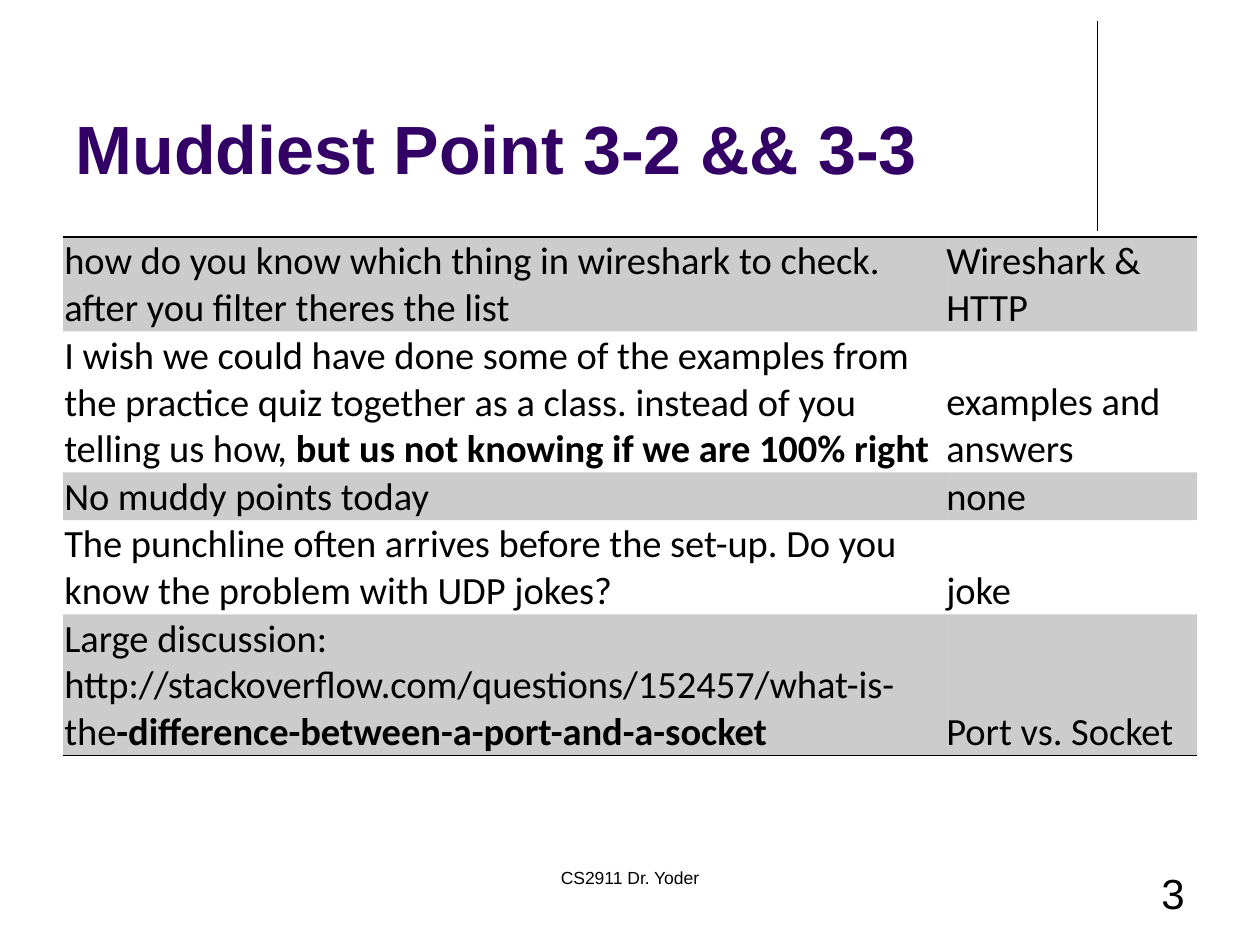
from dataclasses import dataclass

from lxml import etree
from pptx import Presentation
from pptx.dml.color import RGBColor
from pptx.enum.shapes import MSO_CONNECTOR
from pptx.enum.text import MSO_ANCHOR, MSO_AUTO_SIZE, PP_ALIGN
from pptx.oxml import parse_xml
from pptx.oxml.ns import nsdecls, qn
from pptx.util import Pt

STRAIGHT = MSO_CONNECTOR.STRAIGHT
BOTTOM = MSO_ANCHOR.BOTTOM
NO_FIT = MSO_AUTO_SIZE.NONE
LEFT, CENTER, RIGHT = PP_ALIGN.LEFT, PP_ALIGN.CENTER, PP_ALIGN.RIGHT
TITLE_ONLY = 5
NO_STYLE_NO_GRID = "{2D5ABB26-0587-4C30-8999-92F81FD0307C}"


@dataclass(frozen=True)
class Theme:
    ink: str = "000000"
    title_color: str = "330066"
    band_opacity: int = 20
    heading_font: str = "Arial"
    table_font: str = "Calibri"
    title_size: float = 39
    table_size: float = 22
    footer_size: float = 10
    number_size: float = 24
    rule_width: float = 0.75
    border_width: float = 1


class SlideBuilder:
    def __init__(self, slide, theme):
        self.slide = slide
        self.theme = theme

    def style(self, paragraph, font_name, size, color, alignment=LEFT):
        paragraph.alignment = alignment
        paragraph.font.name = font_name
        paragraph.font.size = Pt(size)
        paragraph.font.color.rgb = RGBColor.from_string(color)

    def title(self, text, left, top, width, height):
        shape = self.slide.shapes.title
        shape.left, shape.top = Pt(left), Pt(top)
        shape.width, shape.height = Pt(width), Pt(height)
        frame = shape.text_frame
        frame.text = text
        frame.vertical_anchor = BOTTOM
        frame.auto_size = NO_FIT
        paragraph = frame.paragraphs[0]
        self.style(paragraph, self.theme.heading_font, self.theme.title_size,
                   self.theme.title_color)
        paragraph.font.bold = True

    def text(self, text, left, top, width, height, size, alignment):
        shape = self.slide.shapes.add_textbox(Pt(left), Pt(top), Pt(width), Pt(height))
        frame = shape.text_frame
        frame.word_wrap = True
        frame.text = text
        self.style(frame.paragraphs[0], self.theme.heading_font, size,
                   self.theme.ink, alignment)

    def rule(self, left, top, bottom):
        connector = self.slide.shapes.add_connector(
            STRAIGHT, Pt(left), Pt(top), Pt(left), Pt(bottom))
        connector.line.color.rgb = RGBColor.from_string(self.theme.ink)
        connector.line.width = Pt(self.theme.rule_width)
        etree.SubElement(connector._element.spPr, qn("a:effectLst"))

    def table(self, rows, left, top, column_widths, row_heights):
        frame = self.slide.shapes.add_table(
            len(rows), len(column_widths), Pt(left), Pt(top),
            Pt(sum(column_widths)), Pt(sum(row_heights)))
        table = frame.table
        table.first_row = table.horz_banding = False
        table._tbl.tblPr.find(qn("a:tableStyleId")).text = NO_STYLE_NO_GRID
        for column, width in zip(table.columns, column_widths):
            column.width = Pt(width)
        for index, (row, height, contents) in enumerate(
                zip(table.rows, row_heights, rows)):
            row.height = Pt(height)
            for cell, runs in zip(row.cells, contents):
                self.cell(cell, runs, banded=index % 2 == 0)
                if index == 0:
                    self.border(cell, "lnT")
                if index == len(rows) - 1:
                    self.border(cell, "lnB")

    def cell(self, cell, runs, banded):
        cell.margin_left = cell.margin_right = cell.margin_top = Pt(0.75)
        cell.margin_bottom = Pt(0)
        cell.vertical_anchor = BOTTOM
        paragraph = cell.text_frame.paragraphs[0]
        self.style(paragraph, self.theme.table_font, self.theme.table_size,
                   self.theme.ink)
        for position, text in enumerate(runs):
            run = paragraph.add_run()
            run.text = text
            run.font.bold = position > 0
        if banded:
            cell.fill.solid()
            cell.fill.fore_color.rgb = RGBColor.from_string(self.theme.ink)
            color = cell._tc.tcPr.find(".//" + qn("a:srgbClr"))
            etree.SubElement(color, qn("a:alpha"),
                             val=str(self.theme.band_opacity * 1000))
        else:
            cell.fill.background()

    def border(self, cell, side):
        cell._tc.tcPr.insert(0, parse_xml(
            f'<a:{side} {nsdecls("a")} w="{Pt(self.theme.border_width)}">'
            f'<a:solidFill><a:srgbClr val="{self.theme.ink}"/></a:solidFill>'
            f'</a:{side}>'))


def main():
    presentation = Presentation()
    presentation.slide_width, presentation.slide_height = Pt(720), Pt(540)
    slide = presentation.slides.add_slide(presentation.slide_layouts[TITLE_ONLY])
    theme = Theme()
    builder = SlideBuilder(slide, theme)

    builder.rule(627, 12, 132)
    builder.title("Muddiest Point 3-2 && 3-3", 36, 9, 594, 102)
    builder.text("CS2911 Dr. Yoder", 246, 492, 228, 36, theme.footer_size, CENTER)
    builder.text("3", 516, 492, 168, 36, theme.number_size, RIGHT)

    muddy_points = [
        (["how do you know which thing in wireshark to check. "
          "after you filter theres the list"],
         ["Wireshark & HTTP"]),
        (["I wish we could have done some of the examples from the practice quiz "
          "together as a class. instead of you telling us how, ",
          "but us not knowing if we are 100% right"],
         ["examples and answers"]),
        (["No muddy points today"], ["none"]),
        (["The punchline often arrives before the set-up. "
          "Do you know the problem with UDP jokes?"],
         ["joke"]),
        (["Large discussion: http://stackoverflow.com/questions/152457/what-is-the",
          "-difference-between-a-port-and-a-socket"],
         ["Port vs. Socket"]),
    ]
    line_counts = [2, 3, 1, 2, 3]
    builder.table(muddy_points, 36, 135.5, [504, 144],
                  [26.7 * count + 0.5 for count in line_counts])

    presentation.save("out.pptx")


if __name__ == "__main__":
    main()
